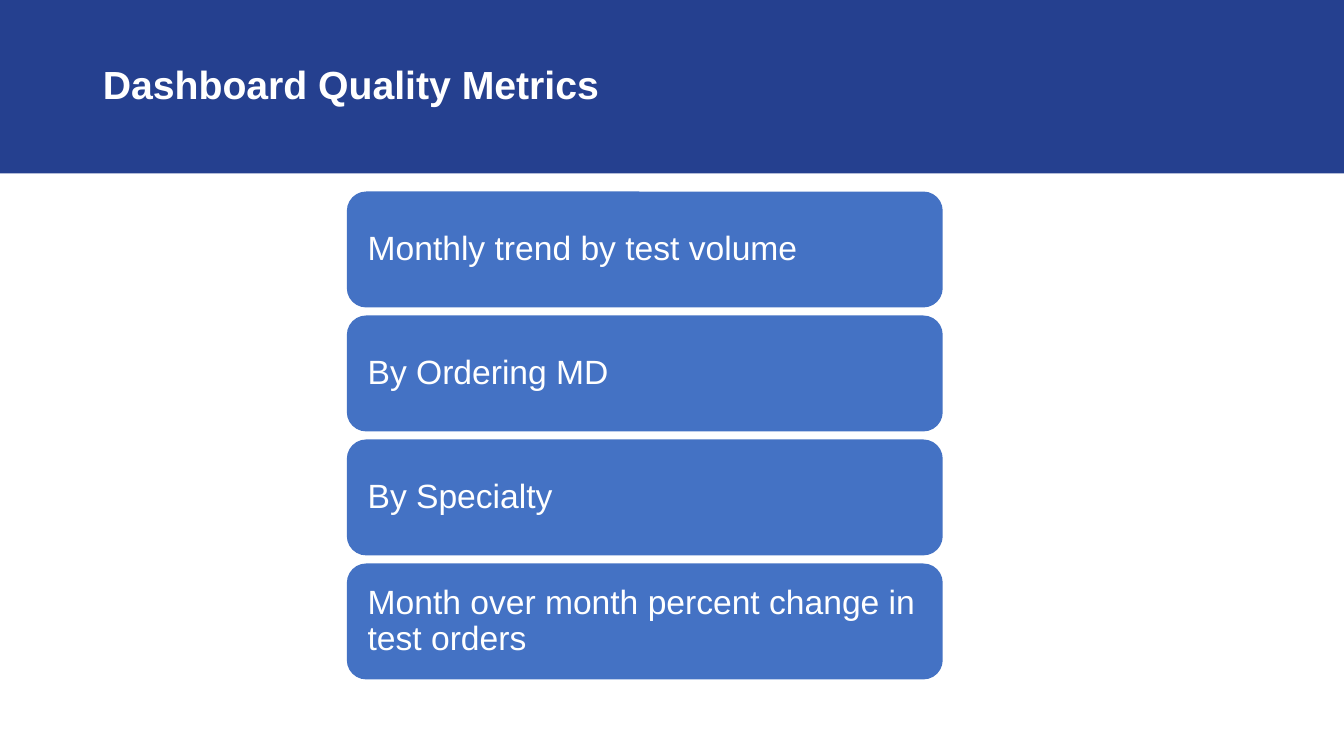
from pptx import Presentation
from pptx.dml.color import RGBColor
from pptx.enum.shapes import MSO_SHAPE
from pptx.enum.text import MSO_ANCHOR, MSO_AUTO_SIZE, PP_ALIGN
from pptx.util import Inches, Pt

TITLE = "Dashboard Quality Metrics"
METRICS = [
    "Monthly trend by test volume",
    "By Ordering MD",
    "By Specialty",
    "Month over month percent change in test orders",
]
COLOURS = {"band": "25408F", "card": "4472C4", "text": "FFFFFF"}
WIDTH, HEIGHT = 13.33, 7.5
BAND_HEIGHT = 1.72
CARD_LEFT, CARD_TOP, CARD_WIDTH, CARD_HEIGHT = 3.44, 1.9, 5.91, 1.15
CARD_PITCH = 1.23


def colour(name):
    return RGBColor.from_string(COLOURS[name])


def add_block(page, preset, place, fill):
    block = page.shapes.add_shape(preset, *map(Inches, place))
    block.shadow.inherit = False
    block.fill.solid()
    block.fill.fore_color.rgb = colour(fill)
    block.line.fill.background()
    return block


def write(box, text, size, bold, inset_x, inset_y):
    frame = box.text_frame
    frame.word_wrap = True
    frame.auto_size = MSO_AUTO_SIZE.NONE
    frame.vertical_anchor = MSO_ANCHOR.MIDDLE
    frame.margin_left = frame.margin_right = Inches(inset_x)
    frame.margin_top = frame.margin_bottom = Inches(inset_y)
    frame.text = text
    para = frame.paragraphs[0]
    para.alignment = PP_ALIGN.LEFT
    para.line_spacing = 0.9
    para.font.name = "Arial"
    para.font.size = Pt(size)
    para.font.bold = bold
    para.font.color.rgb = colour("text")


def main():
    deck = Presentation()
    deck.slide_width, deck.slide_height = Inches(WIDTH), Inches(HEIGHT)
    page = deck.slides.add_slide(deck.slide_layouts[5])

    band = add_block(page, MSO_SHAPE.RECTANGLE, (0, 0, WIDTH, BAND_HEIGHT), "band")
    title = page.shapes.title
    title._element.addprevious(band._element)
    title.left, title.top = Inches(0.92), Inches(0.14)
    title.width, title.height = Inches(11.5), Inches(1.45)
    write(title, TITLE, 28, True, 0.1, 0.05)

    for row, metric in enumerate(METRICS):
        place = (CARD_LEFT, CARD_TOP + row * CARD_PITCH, CARD_WIDTH, CARD_HEIGHT)
        card = add_block(page, MSO_SHAPE.ROUNDED_RECTANGLE, place, "card")
        write(card, metric, 24, False, 0.15, 0.15)

    deck.save("out.pptx")


if __name__ == "__main__":
    main()
